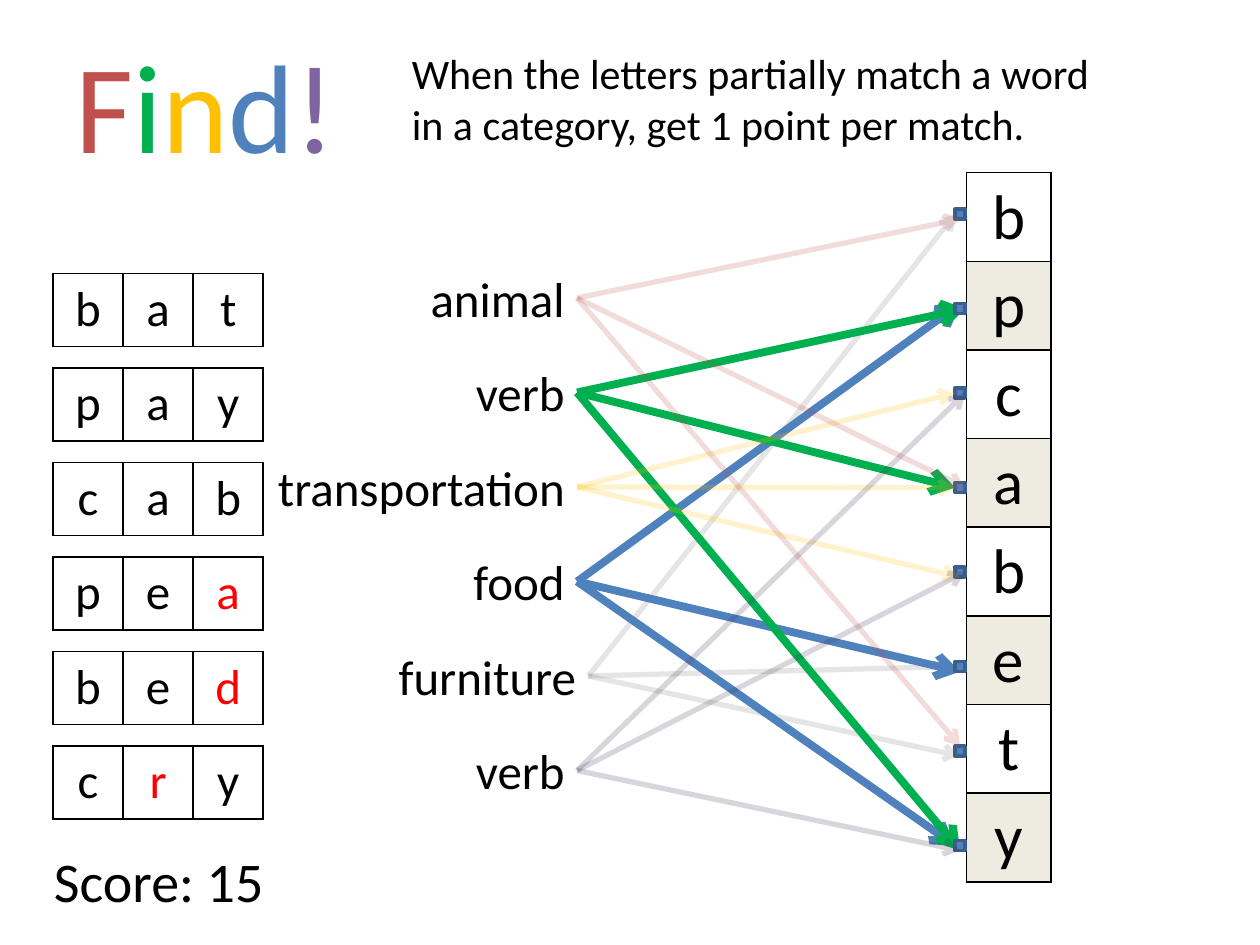
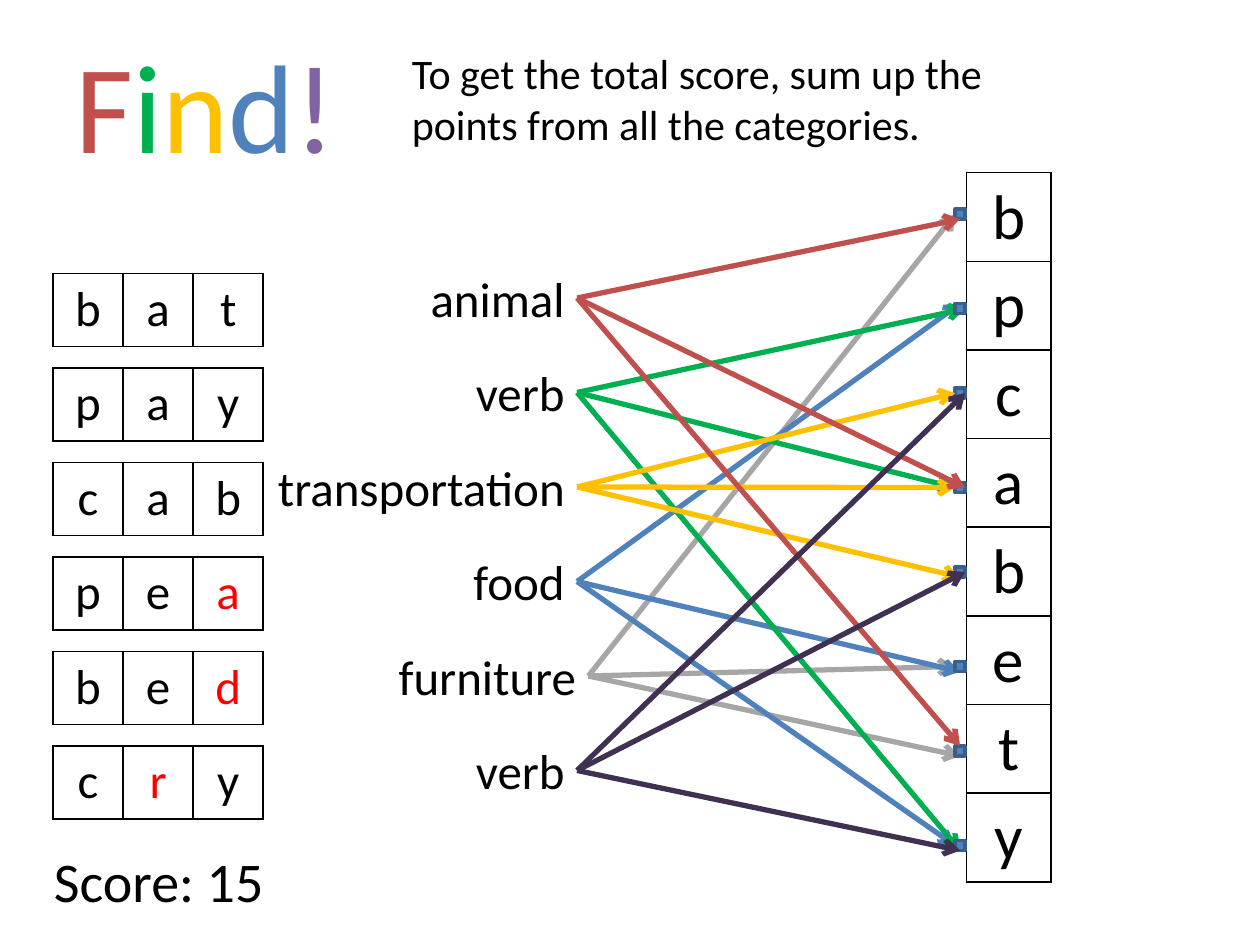
from dataclasses import dataclass

from lxml.etree import SubElement
from pptx import Presentation
from pptx.dml.color import RGBColor
from pptx.enum.shapes import MSO_CONNECTOR, MSO_SHAPE
from pptx.enum.text import MSO_ANCHOR, MSO_AUTO_SIZE, PP_ALIGN
from pptx.oxml.ns import qn
from pptx.util import Inches, Pt


@dataclass(frozen=True)
class Theme:
    """Colours and type sizes shared by the slides."""
    font: str = "Calibri"
    ink: str = "000000"
    missed: str = "FF0000"
    shade: str = "EEECE1"
    red: str = "C0504D"
    green: str = "00B050"
    yellow: str = "FFC000"
    blue: str = "4F81BD"
    purple: str = "8064A2"
    plum: str = "403152"
    gray: str = "A6A6A6"
    faded_gray: str = "7F7F7F"
    port_edge: str = "3A5F8C"
    title_size: int = 72
    letter_size: int = 36
    score_size: int = 32
    label_size: int = 28
    rule_size: int = 24


@dataclass(frozen=True)
class Category:
    """A category, its word and the letter ports that it points to."""
    name: str
    word: str
    missed: str
    color: str
    width: float
    targets: tuple
    right: float = 4.58


THEME = Theme()
TOP, LEFT, BOTTOM, RIGHT = range(4)
LETTERS = "bpcabety"
CATEGORIES = (
    Category("animal", "bat", "", THEME.red, 1.5, ((0, BOTTOM), (3, RIGHT), (6, TOP))),
    Category("verb", "pay", "", THEME.green, 1.17, ((1, RIGHT), (3, LEFT), (7, BOTTOM))),
    Category("transportation", "cab", "", THEME.yellow, 2.75,
             ((2, LEFT), (3, LEFT), (4, BOTTOM))),
    Category("food", "pea", "a", THEME.blue, 1.08, ((1, TOP), (5, BOTTOM), (7, LEFT))),
    Category("furniture", "bed", "d", THEME.gray, 2.08,
             ((0, LEFT), (5, LEFT), (6, BOTTOM)), right=4.67),
    Category("verb", "cry", "r", THEME.plum, 1.25, ((2, RIGHT), (4, RIGHT), (7, BOTTOM))),
)
ROWS_BEHIND_PORTS = (4, 3, 1)
ROWS_OVER_PORTS = (2, 0, 5)
ROW_PITCH = 0.75


def rgb(color):
    """Turn a hex string into a colour."""
    return RGBColor.from_string(color)


def style_font(font, size, color=THEME.ink):
    """Apply the shared typeface with a size and colour."""
    font.name = THEME.font
    font.size = Pt(size)
    font.color.rgb = rgb(color)


def add_title(slide):
    """Write the title with one colour per letter."""
    title = slide.shapes.title
    title.left, title.top = Inches(0.5), Inches(0.17)
    title.width, title.height = Inches(2.58), Inches(1.31)
    frame = title.text_frame
    frame.auto_size = MSO_AUTO_SIZE.NONE
    frame.vertical_anchor = MSO_ANCHOR.TOP
    paragraph = frame.paragraphs[0]
    paragraph.alignment = PP_ALIGN.LEFT
    colors = (THEME.red, THEME.green, THEME.yellow, THEME.blue, THEME.purple)
    for letter, color in zip("Find!", colors):
        run = paragraph.add_run()
        run.text = letter
        style_font(run.font, THEME.title_size, color)


def add_text(slide, text, left, top, width, height, size, align=PP_ALIGN.LEFT):
    """Add one wrapped paragraph."""
    box = slide.shapes.add_textbox(Inches(left), Inches(top), Inches(width), Inches(height))
    box.text_frame.word_wrap = True
    paragraph = box.text_frame.paragraphs[0]
    paragraph.text = text
    paragraph.alignment = align
    style_font(paragraph.font, size)
    return box


def outline_cell(cell):
    """Draw a thin line on all four sides of a cell."""
    properties = cell._tc.get_or_add_tcPr()
    for side in ("lnL", "lnR", "lnT", "lnB"):
        border = SubElement(properties, qn(f"a:{side}"), w=str(Pt(1)))
        fill = SubElement(border, qn("a:solidFill"))
        SubElement(fill, qn("a:srgbClr"), val=THEME.ink)


def fill_cell(cell, letter, size, color=THEME.ink, shade=None):
    """Put one centred letter in an outlined cell."""
    outline_cell(cell)
    if shade:
        cell.fill.solid()
        cell.fill.fore_color.rgb = rgb(shade)
    else:
        cell.fill.background()
    paragraph = cell.text_frame.paragraphs[0]
    paragraph.text = letter
    paragraph.alignment = PP_ALIGN.CENTER
    style_font(paragraph.font, size, color)


def add_grid(slide, rows, columns, left, top, width, height):
    """Add a table without header or banding."""
    grid = slide.shapes.add_table(rows, columns, Inches(left), Inches(top),
                                  Inches(width), Inches(height)).table
    grid.first_row = grid.horz_banding = False
    return grid


def add_letter_column(slide, shaded):
    """Stack the letters, optionally shading every second one."""
    column = add_grid(slide, len(LETTERS), 1, 7.67, 1.37, 0.67, 5.63)
    for row, letter in enumerate(LETTERS):
        shade = THEME.shade if shaded and row % 2 else None
        fill_cell(column.cell(row, 0), letter, THEME.letter_size, shade=shade)


def add_word(slide, row, category):
    """Spell a category's word, marking its missed letter."""
    strip = add_grid(slide, 1, len(category.word), 0.42, 2.17 + row * ROW_PITCH, 1.67, 0.58)
    for column, letter in enumerate(category.word):
        color = THEME.missed if letter == category.missed else THEME.ink
        fill_cell(strip.cell(0, column), letter, THEME.label_size, color)


def add_label(slide, row, category):
    """Name a category at the start of its arrows."""
    return add_text(slide, category.name, category.right - category.width,
                    2.08 + row * ROW_PITCH, category.width, 0.57,
                    THEME.label_size, PP_ALIGN.RIGHT)


def add_port(slide, index):
    """Add the small square where arrows reach a letter."""
    pair, second = divmod(index, 2)
    top = 1.66 + pair * 1.42 + second * 0.75
    port = slide.shapes.add_shape(MSO_SHAPE.RECTANGLE, Inches(7.58), Inches(top),
                                  Inches(0.08), Inches(0.08))
    port.shadow.inherit = False
    port.fill.solid()
    port.fill.fore_color.rgb = rgb(THEME.blue)
    port.line.color.rgb = rgb(THEME.port_edge)
    port.line.width = Pt(2)
    return port


def add_arrow(slide, label, port, side, color, weight, opacity):
    """Connect a category label to one side of a letter port."""
    arrow = slide.shapes.add_connector(MSO_CONNECTOR.STRAIGHT, label.left, label.top,
                                       port.left, port.top)
    arrow.begin_connect(label, RIGHT)
    arrow.end_connect(port, side)
    arrow.line.color.rgb = rgb(color)
    arrow.line.width = Pt(weight)
    properties = arrow.element.spPr
    line = properties.find(qn("a:ln"))
    if opacity < 100:
        SubElement(line.find(".//" + qn("a:srgbClr")), qn("a:alpha"), val=str(opacity * 1000))
    SubElement(line, qn("a:tailEnd"), type="arrow")
    SubElement(properties, qn("a:effectLst"))


def add_matches(slide, highlighted):
    """Draw every match, fading those outside the highlighted rows."""
    labels = [add_label(slide, row, category) for row, category in enumerate(CATEGORIES)]
    ports = [add_port(slide, index) for index in range(len(LETTERS))]

    def add_arrows(rows):
        """Draw the arrows of the given category rows."""
        for row in rows:
            category = CATEGORIES[row]
            color, weight, opacity = category.color, 3, 100
            if row in highlighted:
                weight = 4.5
            elif highlighted:
                opacity = 20
                color = THEME.faded_gray if color == THEME.gray else color
            for index, side in category.targets:
                add_arrow(slide, labels[row], ports[index], side, color, weight, opacity)

    add_arrows(ROWS_BEHIND_PORTS)
    for port in ports:
        port.element.getparent().append(port.element)
    add_arrows(ROWS_OVER_PORTS)


def add_game_slide(deck, rule, rule_width, highlighted=()):
    """Build one step of the game."""
    slide = deck.slides.add_slide(deck.slide_layouts.get_by_name("Title Only"))
    add_title(slide)
    add_text(slide, rule, 3.17, 0.33, rule_width, 0.91, THEME.rule_size)
    add_letter_column(slide, shaded=bool(highlighted))
    for row, category in enumerate(CATEGORIES):
        add_word(slide, row, category)
    add_matches(slide, highlighted)
    add_text(slide, "Score: 15", 0.33, 6.67, 5, 0.64, THEME.score_size)


def main():
    """Build and save the deck."""
    deck = Presentation()
    deck.slide_width, deck.slide_height = Inches(10), Inches(7.5)
    add_game_slide(deck, "When the letters partially match a word in a category, "
                         "get 1 point per match.", 5.83, highlighted=(1, 3))
    add_game_slide(deck, "To get the total score, sum up the points "
                         "from all the categories.", 5.5)
    deck.save("out.pptx")


if __name__ == "__main__":
    main()
